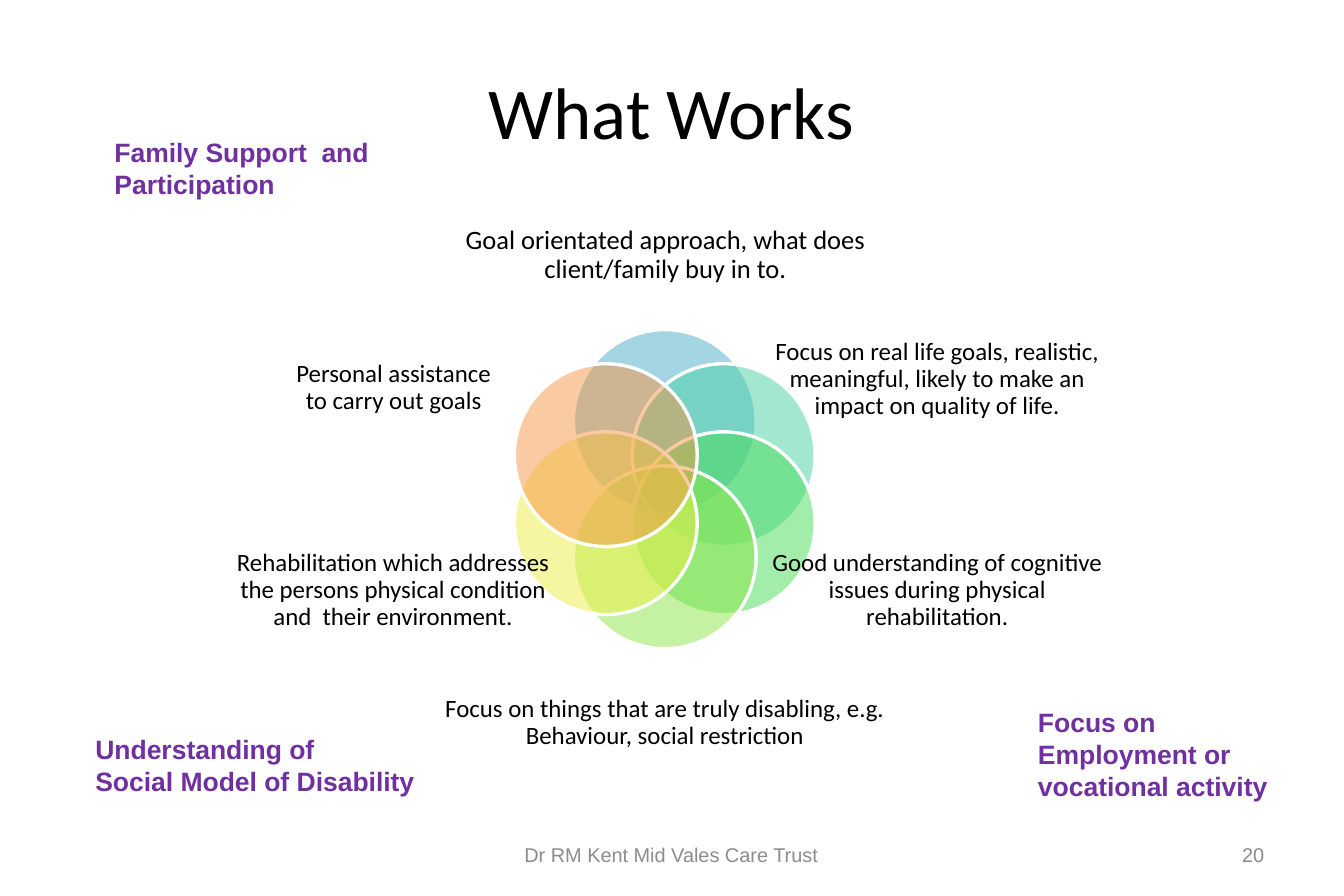
from math import cos, radians, sin

from lxml import etree
from pptx import Presentation
from pptx.dml.color import RGBColor
from pptx.enum.shapes import MSO_SHAPE as SHAPE
from pptx.enum.text import MSO_ANCHOR as ANCHOR, PP_ALIGN as ALIGN
from pptx.oxml.ns import qn
from pptx.util import Pt

# Content
COLORS = {
    "black": "000000", "white": "FFFFFF", "purple": "7030A0",
    "footer": "8C8C8C", "number": "898989",
    "blue": "4BACC6", "teal": "49D1A3", "green": "47DC57",
    "lime": "8DE646", "yellow": "EEEF46", "orange": "F79646",
}
# Clockwise from the top: colour, label box, size, label
PETALS = [
    ("blue", (384, 162, 346, 104), 16,
     "Goal orientated approach, what does client/family buy in to."),
    ("teal", (633, 261, 303, 114), 15,
     "Focus on real life goals, realistic, meaningful, likely to make an impact on quality of life."),
    ("green", (645, 431, 279, 127), 15,
     "Good understanding of cognitive issues during physical rehabilitation."),
    ("lime", (368, 553, 377, 104), 15,
     "Focus on things that are truly disabling, e.g. Behaviour, social restriction"),
    ("yellow", (189, 431, 280, 127), 15,
     "Rehabilitation which addresses the persons physical condition and  their environment."),
    ("orange", (239, 261, 181, 127), 15,
     "Personal assistance to carry out goals"),
]
# Box, wrap, paragraphs
SIDE_NOTES = [
    ((86, 109, 266, 64), True, ["Family Support  and Participation"]),
    ((859, 586, 219, 91), True, ["Focus on Employment or", "vocational activity"]),
    ((70, 609, 291, 64), False, ["Understanding of", "Social Model of Disability"]),
]
# Box, text, size, font, colour, alignment
FRAME = [
    ((56, 30, 1012, 125), "What Works", 44, "Calibri", "black", ALIGN.CENTER),
    ((384, 695, 356, 40), "Dr RM Kent Mid Vales Care Trust", 12, "Arial", "footer", ALIGN.CENTER),
    ((806, 695, 262, 40), "20", 12, "Arial", "number", ALIGN.RIGHT),
]

# Layout in px, 100 px to the inch
PX = 9144
WIDTH, HEIGHT = 1125, 750
RING_LEFT, RING_TOP = 480, 333  # a petal's corner at the ring's centre
RING_RADIUS, PETAL_SIZE = 57, 153


def emu(*lengths):
    return [round(v * PX) for v in lengths]


def rgb(name):
    return RGBColor.from_string(COLORS[name])


def add_text(s, box, lines, size, font, color, align=ALIGN.LEFT,
             anchor=ANCHOR.MIDDLE, bold=False, wrap=True, inset=True, spacing=None):
    tf = s.shapes.add_textbox(*emu(*box)).text_frame
    tf.word_wrap = wrap
    tf.vertical_anchor = anchor
    if not inset:
        tf.margin_left = tf.margin_right = tf.margin_top = tf.margin_bottom = 0
    for i, line in enumerate(lines):
        p = tf.add_paragraph() if i else tf.paragraphs[0]
        p.alignment = align
        p.line_spacing = spacing
        r = p.add_run()
        r.text = line
        r.font.size = Pt(size)
        r.font.name = font
        r.font.bold = bold
        r.font.color.rgb = rgb(color)


def add_petal(s, index, color):
    angle = radians(index * 360 / len(PETALS))
    left = RING_LEFT + RING_RADIUS * sin(angle)
    top = RING_TOP - RING_RADIUS * cos(angle)
    sp = s.shapes.add_shape(SHAPE.OVAL, *emu(left, top, PETAL_SIZE, PETAL_SIZE))
    sp.shadow.inherit = False
    sp.fill.solid()
    sp.fill.fore_color.rgb = rgb(color)
    fill = sp._element.spPr.find(qn("a:solidFill"))
    etree.SubElement(fill[0], qn("a:alpha")).set("val", "50000")
    sp.line.color.rgb = rgb("white")
    sp.line.width = Pt(2)


def main():
    prs = Presentation()
    prs.slide_width, prs.slide_height = emu(WIDTH, HEIGHT)
    s = prs.slides.add_slide(prs.slide_layouts[6])

    # Ring of overlapping petals with labels
    for i, (color, box, size, label) in enumerate(PETALS):
        add_petal(s, i, color)
        add_text(s, box, [label], size, "Calibri", "black", ALIGN.CENTER,
                 inset=False, spacing=0.9)

    # Title, footer and slide number
    for box, text, size, font, color, align in FRAME:
        add_text(s, box, [text], size, font, color, align)

    # Purple notes in the corners
    for box, wrap, lines in SIDE_NOTES:
        add_text(s, box, lines, 16, "Arial", "purple",
                 anchor=ANCHOR.TOP, bold=True, wrap=wrap)

    prs.save("out.pptx")


if __name__ == "__main__":
    main()
